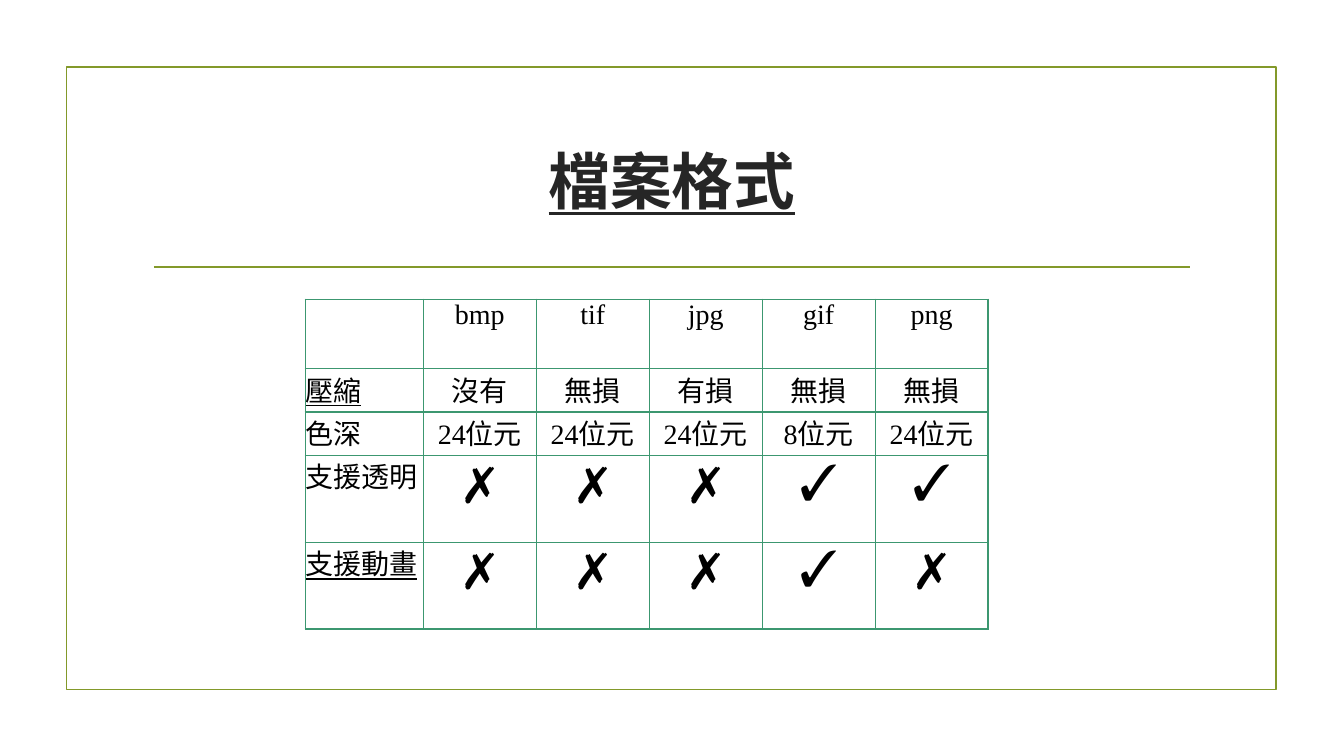
from lxml import etree
from pptx import Presentation
from pptx.dml.color import RGBColor
from pptx.enum.shapes import MSO_CONNECTOR, MSO_SHAPE
from pptx.enum.text import MSO_ANCHOR, PP_ALIGN
from pptx.oxml.ns import qn
from pptx.util import Pt

RECT = MSO_SHAPE.RECTANGLE
LINE = MSO_CONNECTOR.STRAIGHT
MIDDLE = MSO_ANCHOR.MIDDLE
CENTER, JUSTIFY = PP_ALIGN.CENTER, PP_ALIGN.JUSTIFY

FONT = "Times New Roman"
OLIVE, TEAL, DARK, BLACK = "83992A", "3C9770", "262626", "000000"
COLS = [84.4] + [80.7] * 5
ROWS = [49.5, 31, 31, 62, 62]
MARKS = "✗✓"
LINED = ("壓縮", "支援動畫")
DATA = [
    ["", "bmp", "tif", "jpg", "gif", "png"],
    ["壓縮", "沒有", "無損", "有損", "無損", "無損"],
    ["色深", "24位元", "24位元", "24位元", "8位元", "24位元"],
    ["支援透明", "✗", "✗", "✗", "✓", "✓"],
    ["支援動畫", "✗", "✗", "✗", "✓", "✗"],
]


def color(code):
    return RGBColor.from_string(code)


def write(frame, text, size, code, align, bold=False, lined=False):
    """Put one styled run in the first paragraph of a text frame."""
    para = frame.paragraphs[0]
    para.alignment = align
    run = para.add_run()
    run.text = text
    font = run.font
    font.name, font.size = FONT, Pt(size)
    font.bold, font.underline = bold, lined
    font.color.rgb = color(code)


def stroke(shape):
    shape.line.color.rgb = color(OLIVE)
    shape.line.width = Pt(1.25)


def add_frame(slide, left, top, width, height):
    """Draw the border and the rule under the title."""
    rect = slide.shapes.add_shape(
        RECT, Pt(left), Pt(top), Pt(width), Pt(height))
    rect.shadow.inherit = False
    rect.fill.background()
    stroke(rect)
    y = Pt(top + 142.5)
    rule = slide.shapes.add_connector(
        LINE, Pt(left + 62.5), y, Pt(left + width - 61.5), y)
    stroke(rule)
    etree.SubElement(rule._element.spPr, qn("a:effectLst"))


def add_title(slide, left, top, width, height):
    box = slide.shapes.add_textbox(Pt(left), Pt(top), Pt(width), Pt(height))
    frame = box.text_frame
    frame.word_wrap = True
    frame.vertical_anchor = MIDDLE
    write(frame, "檔案格式", 44, DARK, CENTER, True, True)


def edge(cell):
    """Line all four sides of a cell."""
    props = cell._tc.get_or_add_tcPr()
    for side in ("lnL", "lnR", "lnT", "lnB"):
        line = etree.SubElement(props, qn("a:" + side), w=str(Pt(1)))
        fill = etree.SubElement(line, qn("a:solidFill"))
        etree.SubElement(fill, qn("a:srgbClr"), val=TEAL)


def fill_cell(cell, text, first):
    cell.margin_left = cell.margin_right = 0
    cell.margin_top = cell.margin_bottom = 0
    edge(cell)
    cell.fill.background()
    if text:
        size = 36 if text in MARKS else 20
        align = JUSTIFY if first else CENTER
        write(cell.text_frame, text, size, BLACK, align, lined=text in LINED)


def add_grid(slide, left, top):
    shape = slide.shapes.add_table(
        len(ROWS), len(COLS), Pt(left), Pt(top), Pt(sum(COLS)), Pt(sum(ROWS)))
    table = shape.table
    table.first_row = table.horz_banding = False
    for col, width in zip(table.columns, COLS):
        col.width = Pt(width)
    for row, height, texts in zip(table.rows, ROWS, DATA):
        row.height = Pt(height)
        for i, (cell, text) in enumerate(zip(row.cells, texts)):
            fill_cell(cell, text, i == 0)


def main():
    deck = Presentation()
    deck.slide_width, deck.slide_height = Pt(960), Pt(540)
    slide = deck.slides.add_slide(deck.slide_layouts[6])
    add_frame(slide, 47.5, 48, 864, 492.5 - 48)
    add_title(slide, 102, 77, 756, 103)
    add_grid(slide, 218, 213.8)
    deck.save("out.pptx")


if __name__ == "__main__":
    main()
